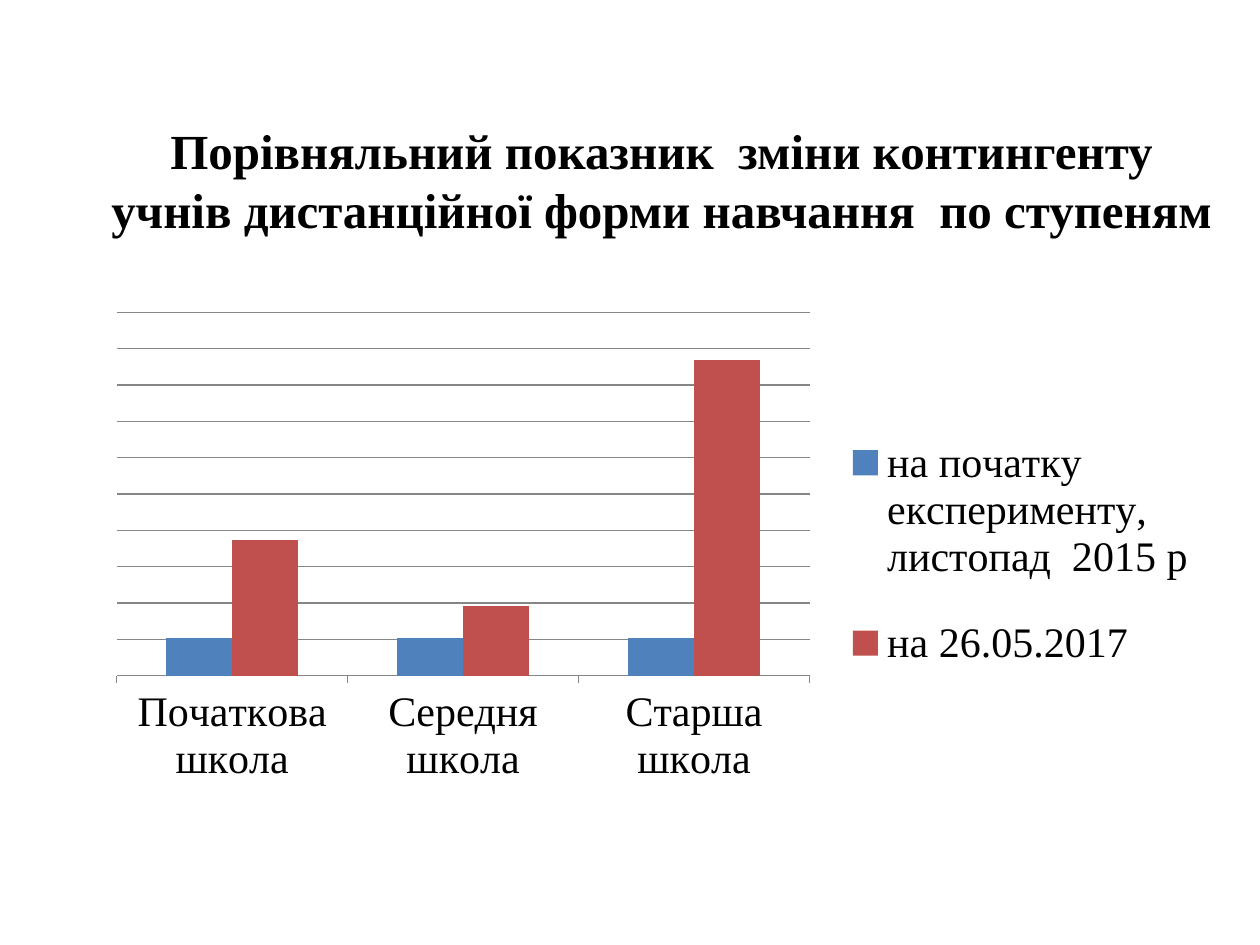
from dataclasses import dataclass

from lxml import etree
from pptx import Presentation
from pptx import util as u
from pptx.chart.data import CategoryChartData
from pptx.dml.color import RGBColor
from pptx.enum import chart as charts, text
from pptx.oxml.ns import qn


@dataclass(frozen=True)
class Theme:
    font: str = "Times New Roman"
    ink: str = "000000"
    grid: str = "868686"
    title_size: int = 28
    chart_size: int = 24


@dataclass(frozen=True)
class Area:
    x: float
    y: float
    w: float
    h: float


@dataclass(frozen=True)
class Series:
    name: str
    values: tuple[int, ...]
    color: str


THEME = Theme()
WIDTH, HEIGHT = u.Inches(10), u.Inches(7.5)
TITLE = "Порівняльний показник  зміни контингенту учнів дистанційної форми навчання  по ступеням"
TITLE_AREA = Area(0.075, 0.12, 0.9, 0.14)
CHART_AREA = Area(0.075, 0.32, 0.88, 0.52)
PLOT_AREA = Area(0.02, 0.02, 0.625, 0.74)
LEGEND_AREA = Area(0.67, 0.2, 0.33, 0.62)
CATEGORIES = ("Початкова школа", "Середня школа", "Старша школа")
SERIES = (
    Series("на початку експерименту, листопад  2015 р", (12, 12, 12), "4F81BD"),
    Series("на 26.05.2017", (43, 22, 100), "C0504D"),
)
GRID_STEP, GRID_ROWS = 11.5, 10


def place(area: Area) -> tuple[int, int, int, int]:
    """Turn shares of the slide into lengths."""
    return (int(area.x * WIDTH), int(area.y * HEIGHT),
            int(area.w * WIDTH), int(area.h * HEIGHT))


def style_font(font, size: int, bold: bool = False) -> None:
    """Apply the theme typeface and ink."""
    font.name, font.size, font.bold = THEME.font, u.Pt(size), bold
    font.color.rgb = RGBColor.from_string(THEME.ink)


def set_layout(element, area: Area, successors: tuple[str, ...], inner: bool = False) -> None:
    """Fix a chart part at shares of the chart's size."""
    for old in element.findall(qn("c:layout")):
        element.remove(old)
    layout = etree.Element(qn("c:layout"))
    manual = etree.SubElement(layout, qn("c:manualLayout"))
    values = {"layoutTarget": "inner"} if inner else {}
    values |= {"xMode": "edge", "yMode": "edge"}
    values |= {key: str(getattr(area, key)) for key in "xywh"}
    for name, value in values.items():
        etree.SubElement(manual, qn(f"c:{name}")).set("val", value)
    tags = [qn(tag) for tag in successors]
    next(child for child in element if child.tag in tags).addprevious(layout)


def add_title(slide) -> None:
    """Draw the centred heading."""
    frame = slide.shapes.add_textbox(*place(TITLE_AREA)).text_frame
    frame.word_wrap = True
    frame.vertical_anchor = text.MSO_ANCHOR.MIDDLE
    paragraph = frame.paragraphs[0]
    paragraph.text = TITLE
    paragraph.alignment = text.PP_ALIGN.CENTER
    style_font(paragraph.font, THEME.title_size, bold=True)


def style_axes(chart) -> None:
    """Set the category line, the hidden value scale and its grid."""
    category, value = chart.category_axis, chart.value_axis
    category.major_tick_mark = charts.XL_TICK_MARK.OUTSIDE
    value.visible = False
    value.minimum_scale, value.maximum_scale = 0, GRID_STEP * GRID_ROWS
    value.major_unit = GRID_STEP
    value.has_major_gridlines = True
    for line in (category.format.line, value.major_gridlines.format.line):
        line.color.rgb = RGBColor.from_string(THEME.grid)
        line.width = u.Pt(0.75)


def add_column_chart(slide) -> None:
    """Draw the clustered columns with a legend on the right."""
    data = CategoryChartData()
    data.categories = CATEGORIES
    for series in SERIES:
        data.add_series(series.name, series.values)
    chart = slide.shapes.add_chart(
        charts.XL_CHART_TYPE.COLUMN_CLUSTERED, *place(CHART_AREA), data).chart
    style_font(chart.font, THEME.chart_size)
    chart.has_title = False
    style_axes(chart)
    plot = chart.plots[0]
    plot.gap_width, plot.overlap, plot.vary_by_categories = 150, 0, False
    for drawn, series in zip(plot.series, SERIES):
        drawn.format.fill.solid()
        drawn.format.fill.fore_color.rgb = RGBColor.from_string(series.color)
    chart.has_legend = True
    chart.legend.position = charts.XL_LEGEND_POSITION.RIGHT
    chart.legend.include_in_layout = False
    plot_area = chart.element.find(f".//{qn('c:plotArea')}")
    legend = chart.element.find(f".//{qn('c:legend')}")
    set_layout(plot_area, PLOT_AREA, ("c:barChart",), inner=True)
    set_layout(legend, LEGEND_AREA, ("c:overlay",))


def main() -> None:
    """Build and save the slide."""
    presentation = Presentation()
    presentation.slide_width, presentation.slide_height = WIDTH, HEIGHT
    slide = presentation.slides.add_slide(presentation.slide_layouts[6])
    add_title(slide)
    add_column_chart(slide)
    presentation.save("out.pptx")


if __name__ == "__main__":
    main()
